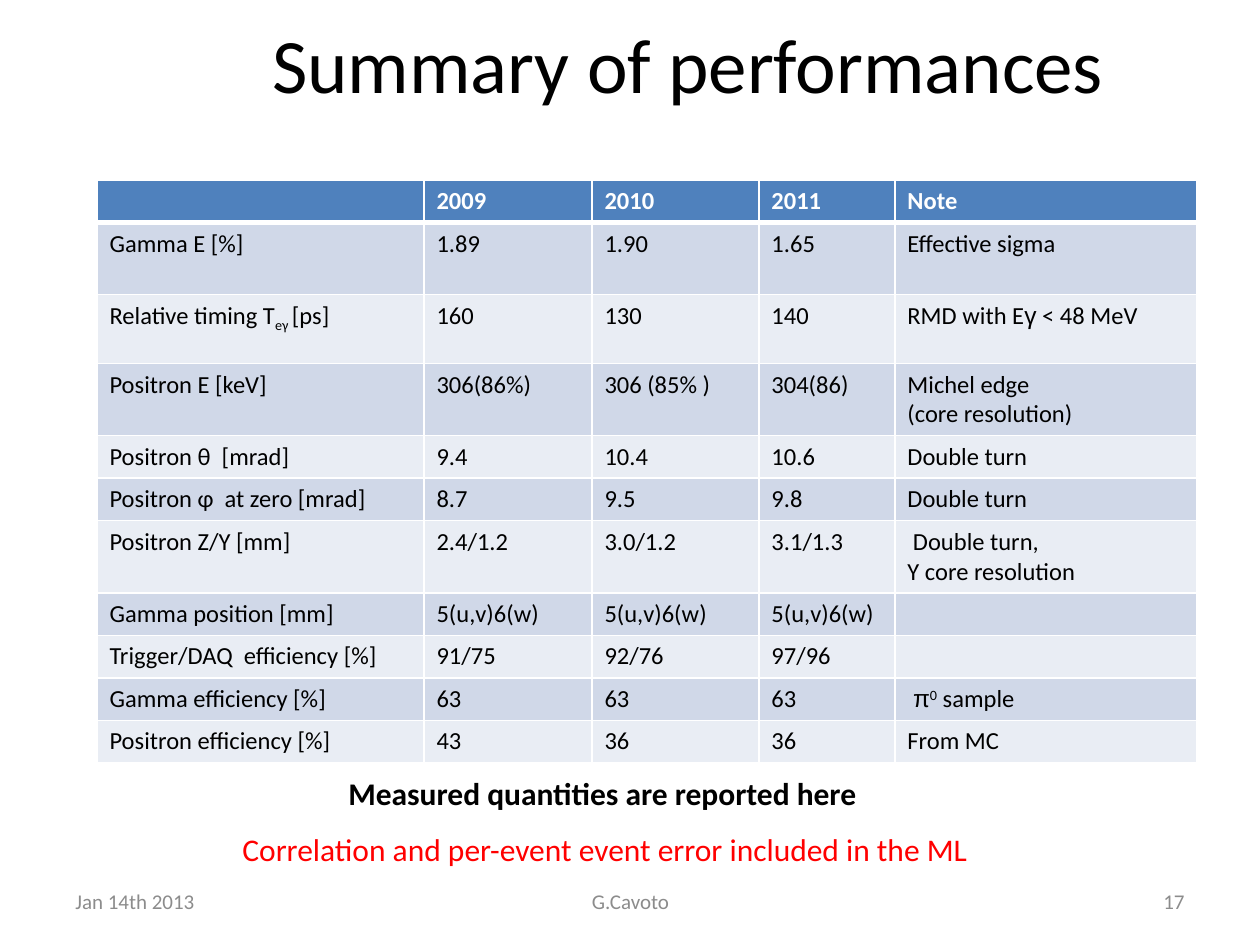
from dataclasses import dataclass

from lxml.etree import SubElement
from pptx import Presentation
from pptx.dml.color import RGBColor as Color
from pptx.enum.text import MSO_ANCHOR as Anchor, MSO_AUTO_SIZE as AutoSize, PP_ALIGN as Align
from pptx.oxml.ns import qn
from pptx.util import Emu, Pt

PX_PER_INCH = 126


def px(length: int) -> Emu:
    return Emu(round(length * 914400 / PX_PER_INCH))


@dataclass(frozen=True)
class Theme:
    font: str = "Calibri"
    greek_font: str = "Arial"
    black: str = "000000"
    white: str = "FFFFFF"
    grey: str = "8C8C8C"
    red: str = "FF0000"
    header_fill: str = "4F81BD"
    band_fills: tuple = ("D0D8E8", "E9EDF4")
    title_size: int = 44
    note_size: int = 18
    table_size: int = 14
    footer_size: int = 12


THEME = Theme()


@dataclass(frozen=True)
class Style:
    size: int
    color: str = THEME.black
    bold: bool = False


@dataclass(frozen=True)
class Span:
    text: str
    font: str = THEME.font
    baseline: int = 0


@dataclass(frozen=True)
class Label:
    text: str
    left: int
    top: int
    width: int
    height: int
    style: Style
    align: Align = Align.LEFT
    anchor: Anchor = Anchor.TOP
    wrap: bool = True


FOOTER = Style(THEME.footer_size, THEME.grey)
LABELS = [
    Label("Jan 14th 2013", 63, 876, 294, 50, FOOTER, Align.LEFT, Anchor.MIDDLE),
    Label("G.Cavoto", 431, 876, 399, 50, FOOTER, Align.CENTER, Anchor.MIDDLE),
    Label("17", 903, 876, 294, 50, FOOTER, Align.RIGHT, Anchor.MIDDLE),
    Label("Correlation and per-event event error included in the ML",
          230, 824, 815, 50, Style(THEME.note_size, THEME.red), wrap=False),
    Label("Measured quantities are reported here",
          336, 768, 604, 50, Style(THEME.note_size, bold=True), wrap=False),
]

COLUMN_WIDTHS = [327, 168, 167, 136, 302]
LINE, TALL, DOUBLE = 42, 69, 72
ROW_HEIGHTS = [LINE, DOUBLE, TALL, DOUBLE, LINE, LINE, DOUBLE, LINE, LINE, LINE, LINE]

# A cell is a string, or a list of paragraphs that each hold spans.
TIMING = [[Span("Relative timing T"), Span("eγ ", baseline=-25), Span("[ps]")]]
GAMMA_CUT = [[Span("RMD with E"), Span("γ", THEME.greek_font), Span(" < 48 MeV")]]
PION_SAMPLE = [[Span(" "), Span("π", THEME.greek_font), Span("0", baseline=30),
                Span(" sample")]]
Z_Y_NOTE = [[Span(" Double turn,")], [Span("Y core resolution")]]

ROWS = [
    ["", "2009", "2010", "2011", "Note"],
    ["Gamma E [%]", "1.89", "1.90", "1.65", "Effective sigma"],
    [TIMING, "160", "130", "140", GAMMA_CUT],
    ["Positron E [keV]", "306(86%)", "306 (85% )", "304(86)",
     "Michel edge \n(core resolution)"],
    ["Positron θ  [mrad]", "9.4", "10.4", "10.6", "Double turn"],
    ["Positron φ  at zero [mrad]", "8.7", "9.5", "9.8", "Double turn"],
    ["Positron Z/Y [mm]", "2.4/1.2", "3.0/1.2", "3.1/1.3", Z_Y_NOTE],
    ["Gamma position [mm]"] + ["5(u,v)6(w)"] * 3 + [""],
    ["Trigger/DAQ  efficiency [%]", "91/75", "92/76", "97/96", ""],
    ["Gamma efficiency [%]", "63", "63", "63", PION_SAMPLE],
    ["Positron efficiency [%]", "43", "36", "36", "From MC"],
]


def add_span(paragraph, span: Span, style: Style) -> None:
    """Add one run per line, with line breaks between them."""
    for number, line in enumerate(span.text.split("\n")):
        if number:
            paragraph.add_line_break()
        run = paragraph.add_run()
        run.text = line
        run.font.name = span.font
        run.font.size = Pt(style.size)
        run.font.bold = style.bold
        run.font.color.rgb = Color.from_string(style.color)
        if span.baseline:
            run._r.get_or_add_rPr().set("baseline", str(span.baseline * 1000))


def fill_cell(cell, content: str | list, style: Style) -> None:
    if not content:
        end = cell.text_frame.paragraphs[0]._p.get_or_add_endParaRPr()
        end.set("sz", str(style.size * 100))
        return
    paragraphs = [[Span(content)]] if isinstance(content, str) else content
    for number, spans in enumerate(paragraphs):
        frame = cell.text_frame
        paragraph = frame.add_paragraph() if number else frame.paragraphs[0]
        for span in spans:
            add_span(paragraph, span, style)


def set_borders(cell, bottom: int, top: int) -> None:
    """Draw white borders, which must precede the fill in the cell properties."""
    properties = cell._tc.get_or_add_tcPr()
    for side, points in (("L", 1), ("R", 1), ("T", top), ("B", bottom)):
        line = SubElement(properties, qn(f"a:ln{side}"), w=str(Pt(points)))
        solid = SubElement(line, qn("a:solidFill"))
        SubElement(solid, qn("a:srgbClr"), val=THEME.white)


def add_performance_table(slide) -> None:
    frame = slide.shapes.add_table(len(ROWS), len(COLUMN_WIDTHS), px(97), px(180),
                                   px(sum(COLUMN_WIDTHS)), px(sum(ROW_HEIGHTS)))
    table = frame.table
    table.horz_banding = False
    for column, width in zip(table.columns, COLUMN_WIDTHS):
        column.width = px(width)
    for number, (row, height, contents) in enumerate(zip(table.rows, ROW_HEIGHTS, ROWS)):
        row.height = px(height)
        header = number == 0
        fill = THEME.header_fill if header else THEME.band_fills[(number - 1) % 2]
        style = Style(THEME.table_size, THEME.white if header else THEME.black, header)
        for cell, content in zip(row.cells, contents):
            set_borders(cell, bottom=3 if header else 1, top=3 if number == 1 else 1)
            cell.fill.solid()
            cell.fill.fore_color.rgb = Color.from_string(fill)
            fill_cell(cell, content, style)


def add_title(slide) -> None:
    title = slide.shapes.title
    title.left, title.top, title.width, title.height = px(130), px(-16), px(1134), px(157)
    frame = title.text_frame
    frame.auto_size = AutoSize.NONE
    frame.vertical_anchor = Anchor.MIDDLE
    frame.paragraphs[0].alignment = Align.CENTER
    add_span(frame.paragraphs[0], Span("Summary of performances "), Style(THEME.title_size))


def add_label(slide, label: Label) -> None:
    box = slide.shapes.add_textbox(px(label.left), px(label.top),
                                   px(label.width), px(label.height))
    frame = box.text_frame
    frame.word_wrap = label.wrap
    frame.auto_size = AutoSize.NONE if label.wrap else AutoSize.SHAPE_TO_FIT_TEXT
    frame.vertical_anchor = label.anchor
    frame.paragraphs[0].alignment = label.align
    add_span(frame.paragraphs[0], Span(label.text), label.style)


def main() -> None:
    presentation = Presentation()
    presentation.slide_width, presentation.slide_height = px(1260), px(945)
    slide = presentation.slides.add_slide(presentation.slide_layouts[5])
    add_title(slide)
    add_performance_table(slide)
    for label in LABELS:
        add_label(slide, label)
    presentation.save("out.pptx")


if __name__ == "__main__":
    main()
